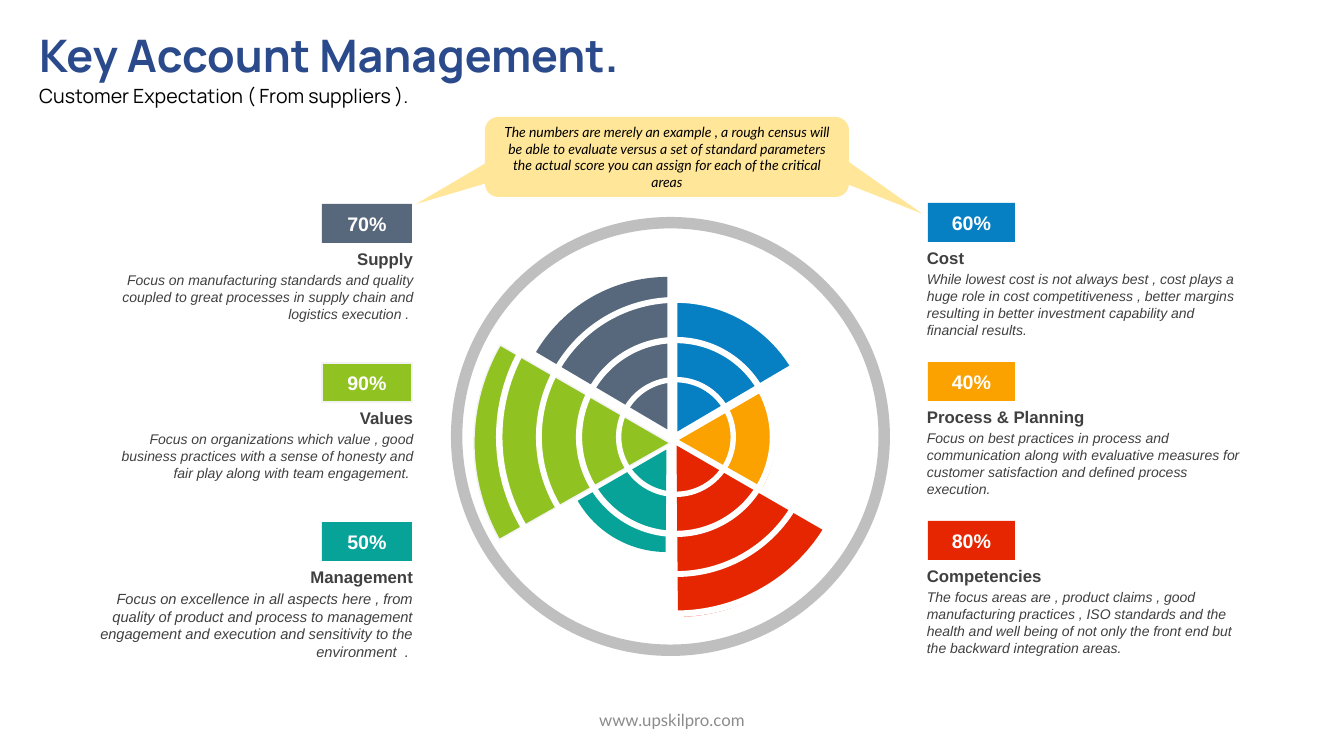
"""Build the Key Account Management slide with its six-sector score wheel."""
from pptx import Presentation
from pptx import util as u
from pptx.dml.color import RGBColor
from pptx.enum import shapes, text

PX = 914400 / 100.8
SHAPE = shapes.MSO_SHAPE
ALIGN = text.PP_ALIGN
ANCHOR = text.MSO_ANCHOR

TITLE = "Key Account Management."
SUBTITLE = "Customer Expectation ( From suppliers )."
CALLOUT = ("The numbers are merely an example , a rough census will be able to evaluate versus "
           "a set of standard parameters the actual score you can assign for each of the critical areas")
FOOTER = "www.upskilpro.com"

# name, score, colour, outline, sector (left, top, size), body size, body
LEFT_AREAS = [
    ("Supply", "70%", "57687C", None, (515, 277, 305), 10,
     "Focus on manufacturing standards and quality coupled to great processes in supply chain "
     "and logistics execution . "),
    ("Values", "90%", "90C221", "F2F2F2", (474, 247, 392), 10,
     "Focus on organizations which value , good business practices with a sense of honesty "
     "and fair play along with team engagement. "),
    ("Management", "50%", "07A398", None, (564, 347, 205), 10.5,
     "Focus on excellence in all aspects here , from quality of product and process to management "
     "engagement and execution and sensitivity to the environment  . "),
]
RIGHT_AREAS = [
    ("Cost", "60%", "0680C3", None, (544, 298, 267), 10,
     "While lowest cost is not always best , cost plays a huge role in cost competitiveness , "
     "better margins resulting in better investment capability and financial results."),
    ("Process & Planning", "40%", "FBA200", None, (583, 344, 192), 10,
     "Focus on best practices in process and communication along with evaluative measures "
     "for customer satisfaction and defined process execution."),
    ("Competencies", "80%", "E62601", None, (505, 274, 343), 10,
     "The focus areas are , product claims , good manufacturing practices , ISO standards and the "
     "health and well being of not only the front end but the backward integration areas."),
]
# areas, badge left, badge top, badge width, text left, alignment, turn per sector, sector angles
SIDES = [
    (LEFT_AREAS, 322, 204, 90, 89, ALIGN.RIGHT, -60, (126.3, 162)),
    (RIGHT_AREAS, 928, 203, 87, 917, ALIGN.LEFT, 60, (162, 197.7)),
]
ROW_PITCH = 159
RING_CENTRE = (676, 437)
RING_BANDS = [0.045, 0.031, 0.021, 0.018]


def px(*lengths):
    return [round(length * PX) for length in lengths]


def colour(value):
    return RGBColor.from_string(value)


def add_run(paragraph, words, size, font, shade, bold=False, italic=False):
    run = paragraph.add_run()
    run.text = words
    run.font.size = u.Pt(size)
    run.font.name = font
    run.font.color.rgb = colour(shade)
    run.font.bold = bold
    run.font.italic = italic


def write(shape, words, size, font, shade, align, anchor=ANCHOR.TOP, **style):
    frame = shape.text_frame
    frame.word_wrap = True
    frame.vertical_anchor = anchor
    frame.paragraphs[0].alignment = align
    add_run(frame.paragraphs[0], words, size, font, shade, **style)


def add_figure(slide, kind, box, fill, outline=None, adjust=(), turn=0):
    figure = slide.shapes.add_shape(kind, *px(*box))
    figure.shadow.inherit = False
    figure.fill.solid()
    figure.fill.fore_color.rgb = colour(fill)
    if outline:
        figure.line.color.rgb = colour(outline)
        figure.line.width = u.Pt(1)
    else:
        figure.line.fill.background()
    for index, value in enumerate(adjust):
        figure.adjustments[index] = value
    figure.rotation = turn
    return figure


def add_heading(slide):
    heading = slide.shapes.title
    heading.left, heading.top, heading.width, heading.height = px(29, 23, 939, 89)
    write(heading, TITLE, 32, "Manrope", "2A4A8B", ALIGN.LEFT, bold=True)
    heading.text_frame.auto_size = text.MSO_AUTO_SIZE.NONE
    subtitle = heading.text_frame.add_paragraph()
    subtitle.alignment = ALIGN.LEFT
    subtitle.line_spacing = 1.07
    subtitle.space_after = u.Pt(8)
    add_run(subtitle, SUBTITLE, 14, "Manrope", "000000")


def add_wheel(slide):
    add_figure(slide, SHAPE.DONUT, (451, 217, 439, 439), "BFBFBF", adjust=[0.026])
    for areas, *_, step, angles in SIDES:
        for row, (_, _, fill, outline, (left, top, size), *_) in enumerate(areas):
            add_figure(slide, SHAPE.PIE, (left, top, size, size), fill, outline,
                       angles, row * step % 360)
    for index, band in enumerate(RING_BANDS):
        size = 120 + 80 * index
        left, top = (middle - size / 2 for middle in RING_CENTRE)
        add_figure(slide, SHAPE.DONUT, (left, top, size, size), "FFFFFF", adjust=[band])


def add_areas(slide):
    for areas, badge_left, first_top, badge_width, text_left, align, *_ in SIDES:
        for row, (name, score, fill, outline, _, size, body) in enumerate(areas):
            top = first_top + row * ROW_PITCH
            badge = add_figure(slide, SHAPE.RECTANGLE, (badge_left, top, badge_width, 39),
                               fill, outline)
            write(badge, score, 14, "Arial", "FFFFFF", ALIGN.CENTER, ANCHOR.MIDDLE, bold=True)
            label = slide.shapes.add_textbox(*px(text_left, top + 40, 334, 30))
            write(label, name, 12, "Arial", "404040", align, bold=True)
            detail = slide.shapes.add_textbox(*px(text_left, top + 63, 334, 78))
            write(detail, body, size, "Arial", "404040", align, italic=True)


def add_callout(slide):
    callout = add_figure(slide, SHAPE.ROUNDED_RECTANGULAR_CALLOUT, (485, 117, 364, 80),
                         "FFE699", adjust=[-0.689, 0.588, 0.167])
    write(callout, CALLOUT, 10, "Lato", "000000", ALIGN.CENTER, ANCHOR.MIDDLE, italic=True)
    add_figure(slide, SHAPE.ISOSCELES_TRIANGLE, (871, 146, 22, 92), "FFE699", turn=118.4)


def main():
    deck = Presentation()
    deck.slide_width, deck.slide_height = px(1344, 756)
    slide = deck.slides.add_slide(deck.slide_layouts[5])
    add_heading(slide)
    add_wheel(slide)
    add_areas(slide)
    add_callout(slide)
    footer = slide.shapes.add_textbox(*px(445, 700, 454, 40))
    write(footer, FOOTER, 12, "Lato", "8C8C8C", ALIGN.CENTER, ANCHOR.MIDDLE)
    deck.save("out.pptx")


if __name__ == "__main__":
    main()
